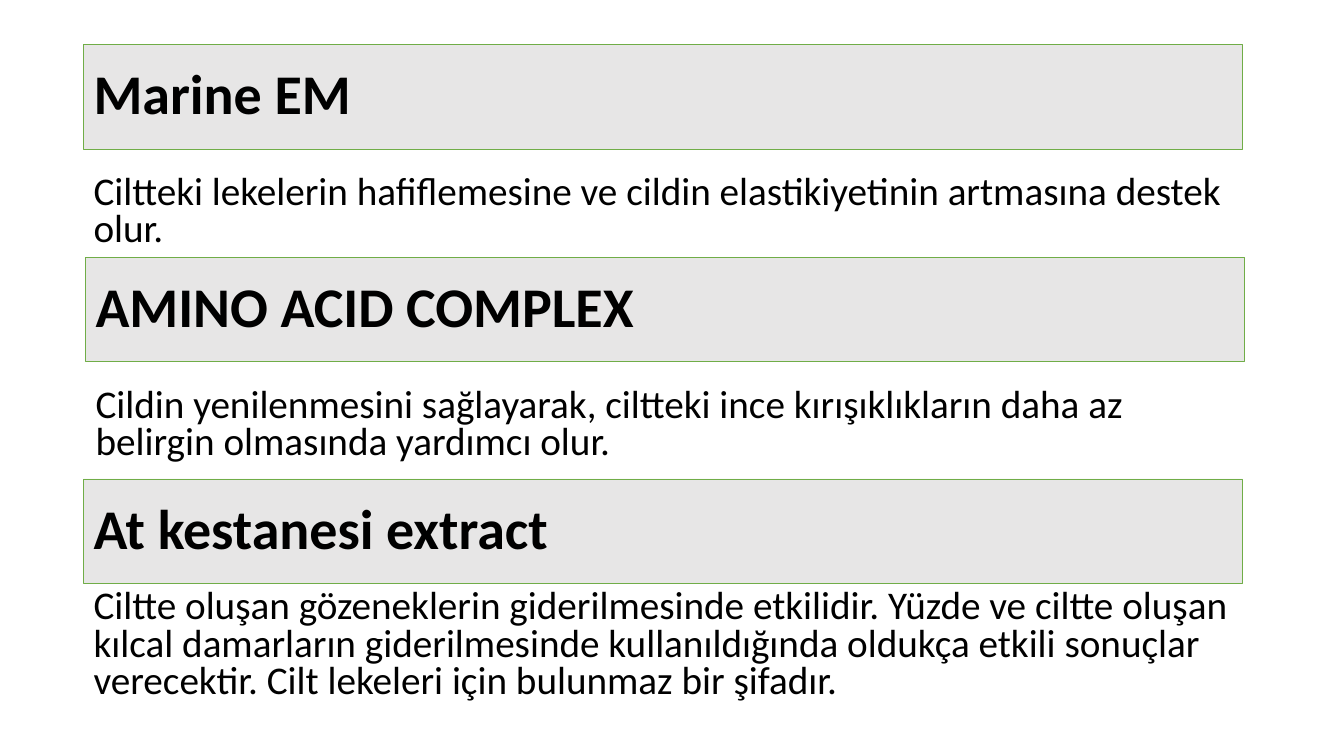
from pptx import Presentation
from pptx import util as u
from pptx.dml.color import RGBColor
from pptx.enum import shapes, text

LEFT, WIDTH = 2.11, 29.21
HEADING_HEIGHT = 2.64

# heading, description, left, heading top, description top, description height
INGREDIENTS = [
    ("Marine EM",
     "Ciltteki lekelerin hafiflemesine ve cildin elastikiyetinin artmasına destek olur.",
     LEFT, 1.12, 4.29, 2.31),
    ("AMINO ACID COMPLEX",
     "Cildin yenilenmesini sağlayarak, ciltteki ince kırışıklıkların daha az "
     "belirgin olmasında yardımcı olur.",
     LEFT + 0.05, 6.48, 9.65, 2.31),
    ("At kestanesi extract",
     "Ciltte oluşan gözeneklerin giderilmesinde etkilidir. Yüzde ve ciltte oluşan "
     "kılcal damarların giderilmesinde kullanıldığında oldukça etkili sonuçlar "
     "verecektir. Cilt lekeleri için bulunmaz bir şifadır.",
     LEFT, 12.07, 14.73, 3.35),
]


def color(hex_code):
    return RGBColor.from_string(hex_code)


class IngredientSlide:
    font = "Calibri"
    ink = "000000"
    band = "E7E6E6"
    border = "70AD47"

    def __init__(self, deck):
        self.slide = deck.slides.add_slide(deck.slide_layouts[6])

    def set_wording(self, frame, wording, size, spacing, bold=False):
        frame.word_wrap = True
        frame.text = wording
        paragraph = frame.paragraphs[0]
        paragraph.alignment = text.PP_ALIGN.LEFT
        paragraph.line_spacing = spacing
        for run in paragraph.runs:
            run.font.name = self.font
            run.font.size = u.Pt(size)
            run.font.bold = bold
            run.font.color.rgb = color(self.ink)
        return paragraph

    def heading(self, wording, left, top):
        bar = self.slide.shapes.add_shape(
            shapes.MSO_SHAPE.RECTANGLE,
            u.Cm(left), u.Cm(top), u.Cm(WIDTH), u.Cm(HEADING_HEIGHT))
        bar.shadow.inherit = False
        bar.fill.solid()
        bar.fill.fore_color.rgb = color(self.band)
        bar.line.color.rgb = color(self.border)
        bar.line.width = u.Pt(0.5)
        bar.text_frame.vertical_anchor = text.MSO_ANCHOR.MIDDLE
        self.set_wording(bar.text_frame, wording, 40, 0.9, bold=True)

    def description(self, wording, left, top, height):
        box = self.slide.shapes.add_textbox(
            u.Cm(left), u.Cm(top), u.Cm(WIDTH), u.Cm(height))
        paragraph = self.set_wording(box.text_frame, wording, 28, 0.8)
        paragraph.space_before = u.Pt(10)


def main():
    deck = Presentation()
    deck.slide_width, deck.slide_height = u.Cm(33.87), u.Cm(19.05)
    page = IngredientSlide(deck)
    for name, effect, left, heading_top, effect_top, effect_height in INGREDIENTS:
        page.description(effect, left, effect_top, effect_height)
        page.heading(name, left, heading_top)
    deck.save("out.pptx")


if __name__ == "__main__":
    main()
